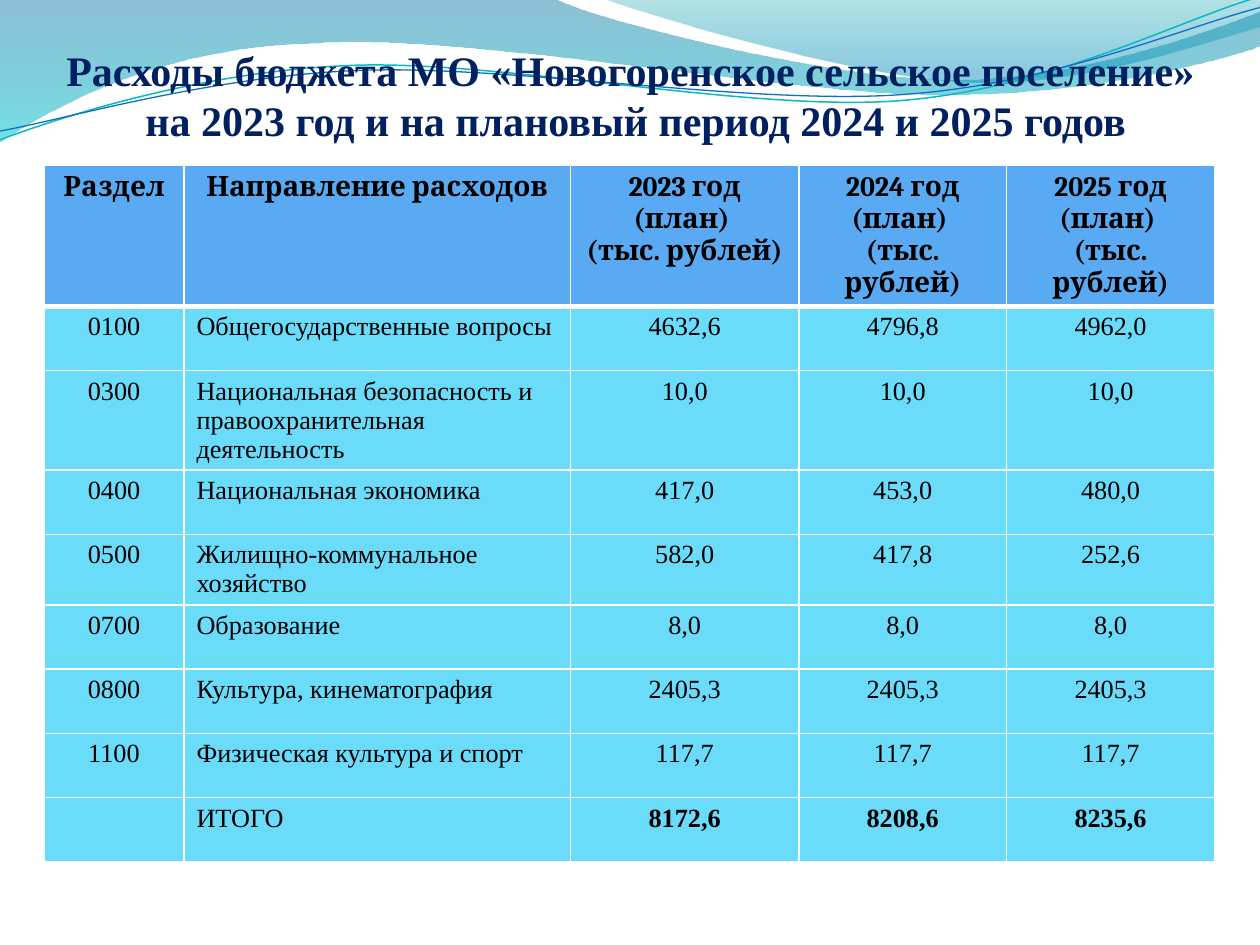
from math import cos, radians, sin

from lxml import etree
from pptx import Presentation
from pptx.dml.color import RGBColor
from pptx.enum.text import MSO_ANCHOR, MSO_AUTO_SIZE, PP_ALIGN
from pptx.oxml.ns import qn
from pptx.util import Inches, Pt

CENTER, LEFT = PP_ALIGN.CENTER, PP_ALIGN.LEFT
TOP, BOTTOM = MSO_ANCHOR.TOP, MSO_ANCHOR.BOTTOM
NO_FIT = MSO_AUTO_SIZE.NONE
SERIF, HEADING = "Times New Roman", "Cambria"
RIBBON_TILT = -2.7

TITLE = ("Расходы бюджета МО «Новогоренское сельское поселение» \v"
         "на 2023 год и на плановый период 2024 и 2025 годов")
HEADERS = ["Раздел", "Направление расходов",
           "2023 год\n(план) \n(тыс. рублей)",
           "2024 год (план) \n(тыс. рублей)",
           "2025 год (план) \n(тыс. рублей)"]
EXPENSES = [
    ["0100", "Общегосударственные вопросы", "4632,6", "4796,8", "4962,0"],
    ["0300", "Национальная безопасность и правоохранительная деятельность",
     "10,0", "10,0", "10,0"],
    ["0400", "Национальная экономика", "417,0", "453,0", "480,0"],
    ["0500", "Жилищно-коммунальное хозяйство", "582,0", "417,8", "252,6"],
    ["0700", "Образование", "8,0", "8,0", "8,0"],
    ["0800", "Культура, кинематография", "2405,3", "2405,3", "2405,3"],
    ["1100", "Физическая культура и спорт", "117,7", "117,7", "117,7"],
    ["", "ИТОГО", "8172,6", "8208,6", "8235,6"],
]
COLUMN_WIDTHS = [1.11, 3.07, 1.81, 1.65, 1.65]
ROW_HEIGHTS = [0.87, 0.51, 0.76] + [0.51] * 6

WAVES = [
    ([(0, 0), (4.4, -0.01), (4.76, 0.17, 6.64, 0.63, 7.58, 0.63),
      (8.53, 0.63, 9.58, 0.26, 10, 0.09), (10.01, 0.36),
      (9.83, 0.44, 8.7, 0.76, 7.46, 0.75), (6.22, 0.75, 3.82, 0.28, 2.57, 0.34),
      (1.29, 0.36, 0.46, 0.83, -0.01, 1.13)],
     [(0, "0074A1", 45), (1, "00C6CF", 55)]),
    ([(4.79, -0.01), (5.09, 0.11, 6.82, 0.62, 7.69, 0.65),
      (8.56, 0.69, 9.61, 0.32, 10, 0.21), (10, 0)],
     [(0, "00A1A9", 30), (0.8, "008BBF", 45)]),
]
RIBBONS = [
    ([(0, 1.11), (0.48, 0.93, 1.58, 0.57, 2.77, 0.52),
      (3.95, 0.47, 5.93, 0.89, 7.13, 0.8), (8.33, 0.71, 9.38, 0.15, 9.98, -0.02)],
     "0AB8BF", 0.85),
    ([(0, 1.04), (0.47, 0.96, 1.64, 0.61, 2.83, 0.56),
      (4.03, 0.51, 5.97, 0.84, 7.17, 0.75), (8.36, 0.67, 9.41, 0.21, 10, 0.06)],
     "0F6FC6", 0.75),
]


def rgb(value):
    """Turn a hex string into a colour."""
    return RGBColor.from_string(value)


def write_text(frame, text, font=SERIF, size=15, color="000000", bold=False,
               align=CENTER):
    """Fill a text frame and format its paragraphs."""
    frame.text = text
    for paragraph in frame.paragraphs:
        paragraph.alignment = align
        paragraph.font.size = Pt(size)
        for run in paragraph.runs:
            run.font.name = font
            run.font.size = Pt(size)
            run.font.bold = bold
            run.font.color.rgb = rgb(color)


def rotate(x, y, degrees):
    """Turn a point clockwise about the origin."""
    angle = radians(degrees)
    return x * cos(angle) - y * sin(angle), x * sin(angle) + y * cos(angle)


def bend_segments(shape, outline):
    """Join each three lines of a curved segment into one Bézier curve."""
    lines = iter(list(shape.element.iter(qn("a:lnTo"))))
    for segment in outline[1:]:
        first = next(lines)
        if len(segment) == 6:
            first.tag = qn("a:cubicBezTo")
            for line in (next(lines), next(lines)):
                first.append(line[0])
                line.getparent().remove(line)


def add_outline(slide, left, top, outline, close=False, tilt=0):
    """Draw a curved outline measured from the given corner."""
    points = [rotate(left + Inches(segment[i]), top + Inches(segment[i + 1]), -tilt)
              for segment in outline for i in range(0, len(segment), 2)]
    builder = slide.shapes.build_freeform(*points[0])
    builder.add_line_segments(points[1:], close=close)
    shape = builder.convert_to_shape()
    bend_segments(shape, outline)
    center_x, center_y = rotate(shape.left + shape.width / 2,
                                shape.top + shape.height / 2, tilt)
    shape.left = round(center_x - shape.width / 2)
    shape.top = round(center_y - shape.height / 2)
    shape.rotation = tilt
    shape.shadow.inherit = False
    return shape


def add_waves(slide, left, top):
    """Draw the translucent waves and the thin ribbons over them."""
    for outline, stops in WAVES:
        wave = add_outline(slide, left, top, outline, close=True)
        wave.line.fill.background()
        wave.fill.gradient()
        wave.fill.gradient_angle = 270
        for stop, (position, color, _) in zip(wave.fill.gradient_stops, stops):
            stop.position = position
            stop.color.rgb = rgb(color)
        for tone, (_, _, opacity) in zip(wave.element.iter(qn("a:srgbClr")), stops):
            etree.SubElement(tone, qn("a:alpha"), val=str(opacity * 1000))
    for outline, color, width in RIBBONS:
        ribbon = add_outline(slide, left, top, outline, tilt=RIBBON_TILT)
        ribbon.fill.background()
        ribbon.line.color.rgb = rgb(color)
        ribbon.line.width = Pt(width)


def add_title(slide, left, top, width, height):
    """Place the title in front of the waves."""
    title = slide.shapes.title
    title.left, title.top, title.width, title.height = left, top, width, height
    frame = title.text_frame
    frame.auto_size = NO_FIT
    frame.word_wrap = True
    frame.vertical_anchor = BOTTOM
    frame.margin_left = frame.margin_right = frame.margin_bottom = 0
    frame.margin_top = Inches(0.05)
    write_text(frame, TITLE, size=24, color="002060", bold=True)
    title.element.getparent().append(title.element)


def set_borders(cell, color, **widths):
    """Draw cell borders, with widths in points by side."""
    properties = cell._tc.get_or_add_tcPr()
    for index, (side, width) in enumerate(widths.items()):
        border = etree.Element(qn(f"a:ln{side}"), w=str(Pt(width)))
        fill = etree.SubElement(border, qn("a:solidFill"))
        etree.SubElement(fill, qn("a:srgbClr"), val=color)
        properties.insert(index, border)


def add_expense_table(slide, left, top, width, height):
    """Build the table of expenses by section and year."""
    rows = [HEADERS] + EXPENSES
    frame = slide.shapes.add_table(len(rows), len(HEADERS), left, top, width, height)
    table = frame.table
    table.horz_banding = False
    for column, column_width in zip(table.columns, COLUMN_WIDTHS):
        column.width = Inches(column_width)
    for row, row_height in zip(table.rows, ROW_HEIGHTS):
        row.height = Inches(row_height)
    frame.height = height
    for r, values in enumerate(rows):
        is_header, is_total = r == 0, r == len(rows) - 1
        for c, value in enumerate(values):
            cell = table.cell(r, c)
            cell.vertical_anchor = TOP
            cell.fill.solid()
            cell.fill.fore_color.rgb = rgb("59AAF2" if is_header else "6BDBFA")
            set_borders(cell, "FFFFFF", L=1, R=1, T=3 if r == 1 else 1,
                        B=3 if is_header else 1)
            write_text(cell.text_frame, value,
                       font=HEADING if is_header else SERIF,
                       size=16 if is_header else 15,
                       bold=is_header or (is_total and c > 1),
                       align=LEFT if c == 1 and not is_header else CENTER)


def main():
    """Build the budget slide and save it."""
    presentation = Presentation()
    presentation.slide_width, presentation.slide_height = Inches(10), Inches(7.5)
    slide = presentation.slides.add_slide(presentation.slide_layouts[5])
    add_waves(slide, Inches(0), Inches(0))
    add_title(slide, Inches(0.2), Inches(0.3), Inches(9.69), Inches(0.85))
    add_expense_table(slide, Inches(0.35), Inches(1.31), Inches(9.29), Inches(5.66))
    presentation.save("out.pptx")


if __name__ == "__main__":
    main()
